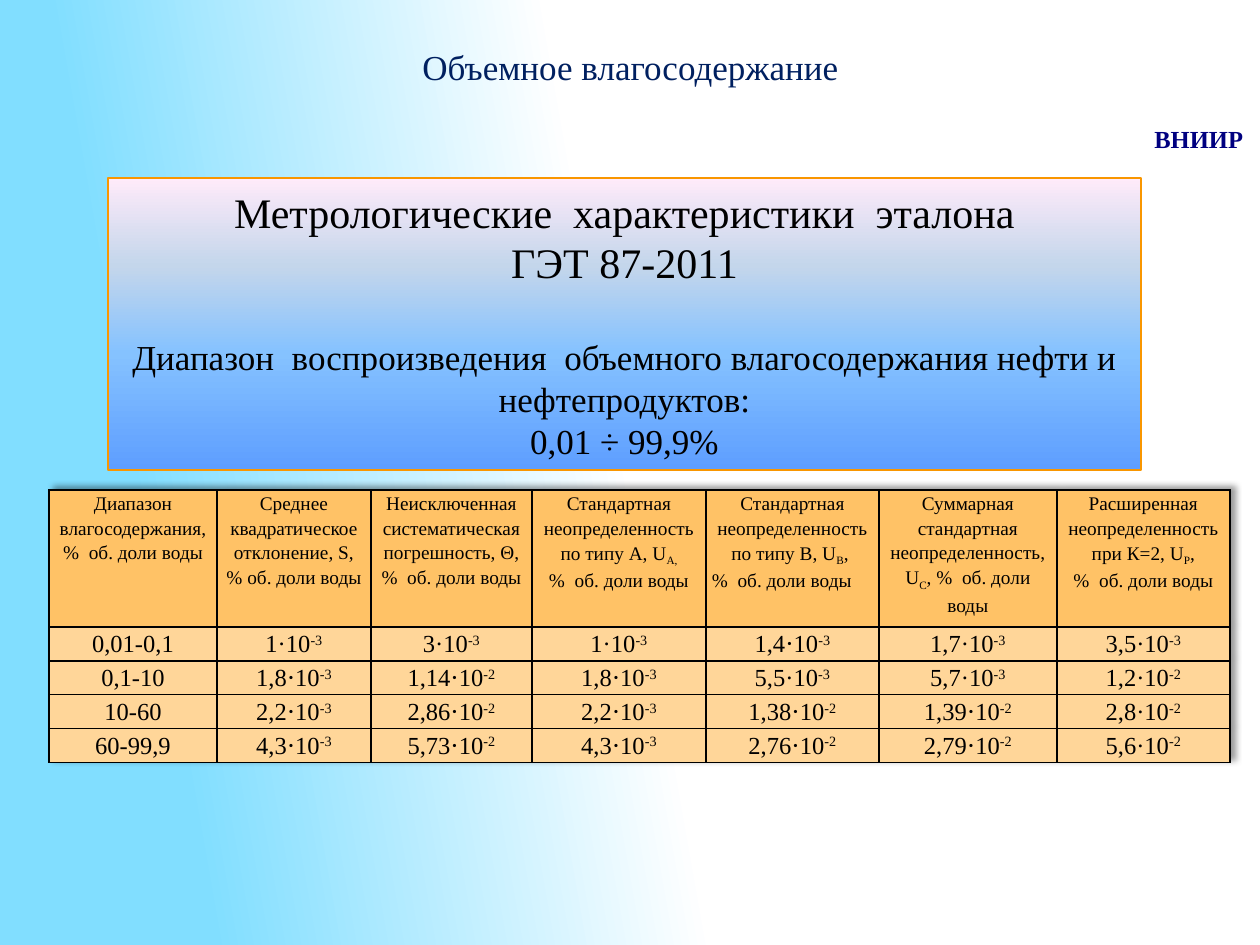
from lxml import etree
from pptx import Presentation
from pptx.dml.color import RGBColor
from pptx.enum import shapes, text
from pptx.oxml import parse_xml
from pptx.util import Pt

PX = 914400 // 126
NS = 'xmlns:a="http://schemas.openxmlformats.org/drawingml/2006/main"'
HUE = {"title": "002060", "mark": "000080", "ink": "000000", "edge": "F99600",
       "head": "FFC266", "body": "FFD699"}
MID = text.PP_ALIGN.CENTER


def write(para, words, size, hue="ink", base=0, align=MID):
    """Fill a paragraph; parts between bars are raised or lowered by base."""
    para.alignment = align
    for i, part in enumerate(words.split("|")):
        if not part:
            continue
        run = para.add_run()
        run.text = part
        run.font.size, run.font.name = Pt(size), "Times New Roman"
        run.font.color.rgb = RGBColor.from_string(HUE[hue])
        if i % 2:
            run.font._element.set("baseline", str(base * 1000))


def blend(fill, stops, angle):
    """Give a fill several gradient stops and a clockwise angle."""
    fill.gradient()
    grad = fill._fill._gradFill
    for kid in list(grad):
        grad.remove(kid)
    marks = "".join(f'<a:gs pos="{pos}000"><a:srgbClr val="{hue}"/></a:gs>' for pos, hue in stops)
    grad.append(parse_xml(f"<a:gsLst {NS}>{marks}</a:gsLst>"))
    grad.append(parse_xml(f'<a:lin {NS} ang="{angle * 60000}" scaled="0"/>'))


deck = Presentation()
deck.slide_width, deck.slide_height = 1260 * PX, 945 * PX
slide = deck.slides.add_slide(deck.slide_layouts[5])
blend(slide.background.fill, [(50, "FFFFFF"), (85, "81DEFF"), (100, "81DEFF")], 170)

# Title
title = slide.shapes.title
title.left, title.top, title.width, title.height = 168 * PX, 39 * PX, 925 * PX, 55 * PX
title.text_frame.vertical_anchor = text.MSO_ANCHOR.TOP
write(title.text_frame.paragraphs[0], "Объемное влагосодержание", 20, "title")

# Institute mark
mark = slide.shapes.add_textbox(1142 * PX, 118 * PX, 118 * PX, 43 * PX).text_frame
write(mark.paragraphs[0], "ВНИИР", 14, "mark", align=text.PP_ALIGN.LEFT)
mark.paragraphs[0].runs[0].font.bold = True

# Panel with the range of the standard
panel = slide.shapes.add_shape(shapes.MSO_SHAPE.RECTANGLE, 108 * PX, 178 * PX, 1033 * PX, 292 * PX)
panel.shadow.inherit = False
blend(panel.fill, [(0, "5E9EFF"), (40, "85C2FF"), (70, "C4D6EB"), (100, "FFEBFA")], 270)
panel.line.color.rgb = RGBColor.from_string(HUE["edge"])
panel.line.width = Pt(0.75)
frame = panel.text_frame
frame.word_wrap = True
lines = [("Метрологические  характеристики  эталона", 24, 0),
         ("ГЭТ 87-2011", 24, 0),
         ("Диапазон  воспроизведения  объемного влагосодержания нефти и нефтепродуктов:", 20, 28),
         ("0,01 ÷ 99,9%", 20, 0)]
for i, (words, size, gap) in enumerate(lines):
    para = frame.add_paragraph() if i else frame.paragraphs[0]
    write(para, words, size)
    if gap:
        para.space_before = Pt(gap)

# Table of uncertainties: one header row, four ranges
share = "%  об. доли воды"
heads = [["Диапазон влагосодержания, " + share],
         ["Среднее квадратическое отклонение, S,", "% об. доли воды"],
         ["Неисключенная систематическая погрешность, Θ,", share],
         ["Стандартная неопределенность", "по типу А, U|A,|", share],
         ["Стандартная неопределенность", "по типу В, U|B|, ", share],
         ["Суммарная стандартная неопределенность,", "U|C|, " + share],
         ["Расширенная неопределенность", "при К=2, U|P|,", share]]
data = ["0,01-0,1 1·10|-3 3·10|-3 1·10|-3 1,4⋅10|-3 1,7·10|-3 3,5·10|-3",
        "0,1-10 1,8⋅10|-3 1,14⋅10|-2 1,8⋅10|-3 5,5·10|-3 5,7·10|-3 1,2·10|-2",
        "10-60 2,2⋅10|-3 2,86⋅10|-2 2,2⋅10|-3 1,38⋅10|-2 1,39⋅10|-2 2,8·10|-2",
        "60-99,9 4,3⋅10|-3 5,73⋅10|-2 4,3⋅10|-3 2,76⋅10|-2 2,79⋅10|-2 5,6·10|-2"]
rows = [heads] + [[[word] for word in row.split()] for row in data]
wide = [168, 154, 161, 174, 173, 178, 173]
grid = slide.shapes.add_table(len(rows), len(wide), 49 * PX, 490 * PX, sum(wide) * PX, 269 * PX).table
for col, width in zip(grid.columns, wide):
    col.width = width * PX
for r, row in enumerate(rows):
    grid.rows[r].height = (33 if r else 137) * PX
    for c, paras in enumerate(row):
        cell = grid.cell(r, c)
        cell.margin_left = cell.margin_right = 6 * PX
        cell.margin_top = cell.margin_bottom = 0
        for i, words in enumerate(paras):
            para = cell.text_frame.add_paragraph() if i else cell.text_frame.paragraphs[0]
            left = r == 0 and c == 4 and i == 2
            write(para, words, 14 if r else 11, base=30 if r else -25,
                  align=text.PP_ALIGN.LEFT if left else MID)
            para.line_spacing = 1.15
            for run in para.runs:
                run.font.bold = False
        props = cell._tc.get_or_add_tcPr()
        for side in ("lnL", "lnR", "lnT", "lnB"):
            props.append(parse_xml(f'<a:{side} {NS} w="12700"><a:solidFill><a:srgbClr val="000000"/>'
                                   f"</a:solidFill></a:{side}>"))
        cell.fill.solid()
        cell.fill.fore_color.rgb = RGBColor.from_string(HUE["body" if r else "head"])

# Soft shadow above and right of the table
grid._tbl.tblPr.insert(0, etree.fromstring(
    f'<a:effectLst {NS}><a:outerShdw blurRad="50800" dist="38100" dir="18900000">'
    '<a:srgbClr val="000000"><a:alpha val="40000"/></a:srgbClr></a:outerShdw></a:effectLst>'))

deck.save("out.pptx")
